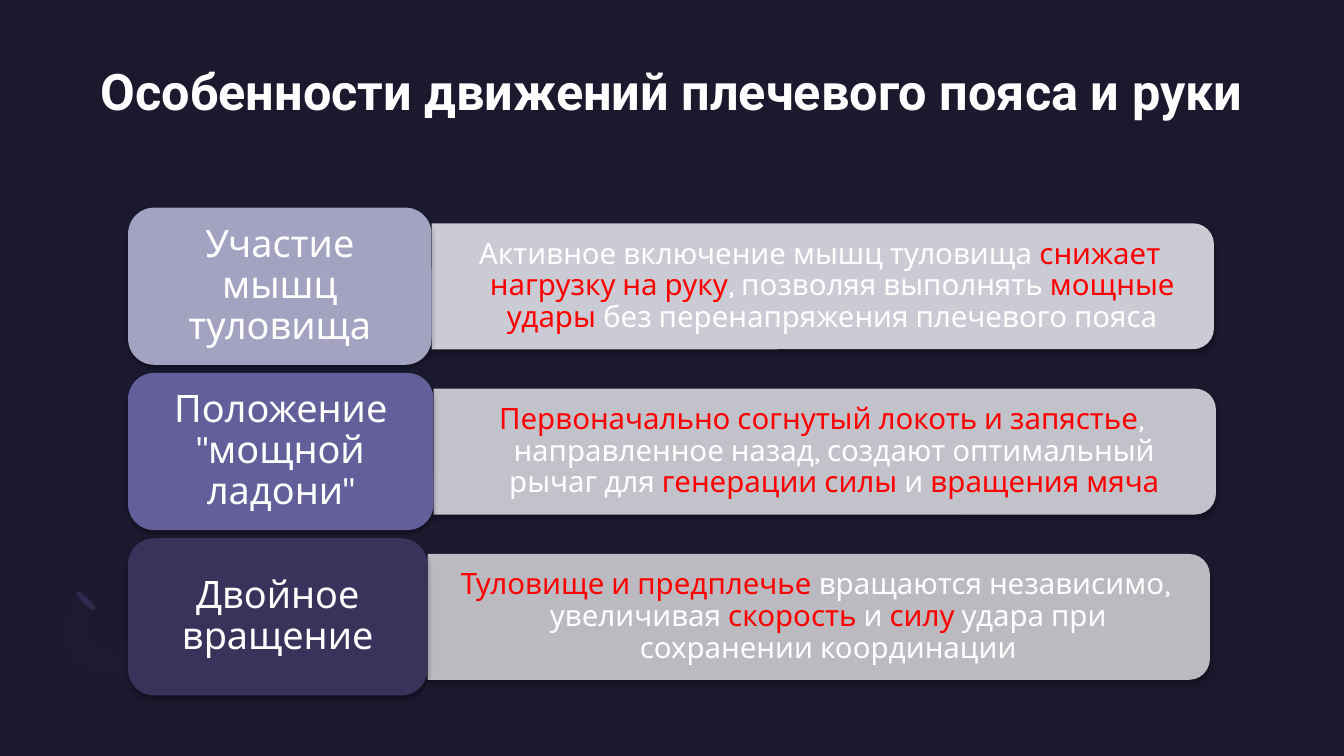
from lxml import etree
from pptx import Presentation
from pptx.dml.color import RGBColor
from pptx.enum.shapes import MSO_SHAPE
from pptx.enum.text import MSO_ANCHOR, PP_ALIGN
from pptx.oxml import parse_xml
from pptx.oxml.ns import nsdecls, qn
from pptx.util import Inches, Pt

NIGHT = RGBColor(0x1B, 0x19, 0x2E)
DUSK = RGBColor(0x2C, 0x28, 0x4A)
VIOLET = RGBColor(0x77, 0x71, 0xB2)
WHITE = RGBColor(0xFF, 0xFF, 0xFF)
RED = RGBColor(0xFF, 0x00, 0x00)

ROWS = [
    ("Участие мышц туловища", 3.01, RGBColor(0xA3, 0xA3, 0xC1), RGBColor(0xE0, 0xE0, 0xE9), [
        ("Активное включение мышц туловища ", WHITE),
        ("снижает нагрузку на руку", RED),
        (", позволяя выполнять ", WHITE),
        ("мощные удары ", RED),
        ("без перенапряжения плечевого пояса", WHITE)]),
    ("Положение \"мощной ладони\"", 3.03, RGBColor(0x62, 0x5F, 0x9A), RGBColor(0xD6, 0xD6, 0xDE), [
        ("Первоначально согнутый локоть и запястье", RED),
        (", направленное назад, создают оптимальный рычаг для ", WHITE),
        ("генерации силы ", RED),
        ("и ", WHITE),
        ("вращения мяча", RED)]),
    ("Двойное вращение", 2.97, RGBColor(0x37, 0x33, 0x5B), RGBColor(0xCE, 0xCD, 0xD2), [
        ("Туловище и предплечье ", RED),
        ("вращаются независимо, увеличивая ", WHITE),
        ("скорость ", RED),
        ("и ", WHITE),
        ("силу ", RED),
        ("удара при сохранении координации", WHITE)]),
]
CARD_LEFT, FIRST_TOP, PITCH, CARD_HEIGHT = 1.27, 2.06, 1.64, 1.56
PLATE_LENGTH, PLATE_HEIGHT = 7.76, 1.25
TEXT_WIDTH, TEXT_HEIGHT = 7.7, 1.13
SHADOW = (f'<a:effectLst {nsdecls("a")}><a:outerShdw blurRad="44450" dist="27940" dir="5400000" '
          'algn="ctr" rotWithShape="0"><a:srgbClr val="000000"><a:alpha val="32000"/></a:srgbClr>'
          '</a:outerShdw></a:effectLst>')


def paint(shape, color, opacity=100, shadow=False):
    shape.shadow.inherit = False
    shape.fill.solid()
    shape.fill.fore_color.rgb = color
    shape.line.fill.background()
    properties = shape._element.spPr
    if opacity < 100:
        tint = properties.find(qn("a:solidFill"))[0]
        etree.SubElement(tint, qn("a:alpha")).set("val", str(opacity * 1000))
    if shadow:
        properties.replace(properties.find(qn("a:effectLst")), parse_xml(SHADOW))


def write(shape, spans, size, font, margins=(0, 0), anchor=MSO_ANCHOR.MIDDLE):
    frame = shape.text_frame
    frame.word_wrap = True
    frame.vertical_anchor = anchor
    frame.margin_left = frame.margin_right = Inches(margins[0])
    frame.margin_top = frame.margin_bottom = Inches(margins[1])
    para = frame.paragraphs[0]
    para.alignment = PP_ALIGN.CENTER
    para.font.size = Pt(size)
    para.font.name = font
    for text, color in spans:
        span = para.add_run()
        span.text = text
        span.font.color.rgb = color
    return para


deck = Presentation()
deck.slide_width = Inches(13.33)
deck.slide_height = Inches(7.5)
page = deck.slides.add_slide(deck.slide_layouts[6])
page.background.fill.solid()
page.background.fill.fore_color.rgb = NIGHT
shapes = page.shapes

for left, top in [(1.35, 6.37), (0.82, 5.83)]:
    petal = shapes.add_shape(MSO_SHAPE.OVAL, Inches(left), Inches(top), Inches(0.06), Inches(0.26))
    petal.rotation = 135
    paint(petal, DUSK)

CURVES = [
    [(0.76, 6.59), (0.56, 6.39), (0.58, 6.05), (0.81, 5.82)],
    [(0.99, 6), (0.87, 6.11), (0.86, 6.29), (0.96, 6.38)],
    [(0.96, 6.38), (1.06, 6.48), (1.23, 6.47), (1.35, 6.36)],
    [(1.52, 6.54), (1.3, 6.76), (0.95, 6.79), (0.76, 6.59)],
]
outline = []
for curve in CURVES:
    for step in range(9):
        t = step / 8
        weights = ((1 - t) ** 3, 3 * t * (1 - t) ** 2, 3 * t * t * (1 - t), t ** 3)
        outline.append(tuple(Inches(sum(w * point[axis] for w, point in zip(weights, curve)))
                             for axis in (0, 1)))
builder = shapes.build_freeform(*outline[0])
builder.add_line_segments(outline[1:], close=True)
paint(builder.convert_to_shape(), VIOLET, 3)

title = shapes.add_textbox(Inches(0.6), Inches(0.6), Inches(12.13), Inches(1.46))
heading = write(title, [("Особенности движений плечевого пояса и руки", WHITE)], 36, "Roboto",
                anchor=MSO_ANCHOR.TOP)
heading.font.bold = True

for index, (label, card_width, card_color, plate_color, spans) in enumerate(ROWS):
    top = FIRST_TOP + index * PITCH
    middle = top + CARD_HEIGHT / 2
    joint = CARD_LEFT + card_width

    plate = shapes.add_shape(
        MSO_SHAPE.ROUND_2_SAME_RECTANGLE,
        Inches(joint + (PLATE_LENGTH - PLATE_HEIGHT) / 2), Inches(middle - PLATE_LENGTH / 2),
        Inches(PLATE_HEIGHT), Inches(PLATE_LENGTH))
    plate.rotation = 90
    paint(plate, plate_color, 90, shadow=True)

    box = shapes.add_textbox(Inches(joint), Inches(middle - TEXT_HEIGHT / 2),
                             Inches(TEXT_WIDTH), Inches(TEXT_HEIGHT))
    para = write(box, spans, 21, "Karla", (0.09, 0.04))
    para.level = 1
    para.line_spacing = 0.9
    indents = para._p.get_or_add_pPr()
    indents.set("marL", str(Inches(0.25)))
    indents.set("indent", str(-Inches(0.25)))

    card = shapes.add_shape(MSO_SHAPE.ROUNDED_RECTANGLE, Inches(CARD_LEFT), Inches(top),
                            Inches(card_width), Inches(CARD_HEIGHT))
    paint(card, card_color, shadow=True)
    write(card, [(label, WHITE)], 27, "Karla", (0.19, 0.14)).line_spacing = 0.9

deck.save("out.pptx")
